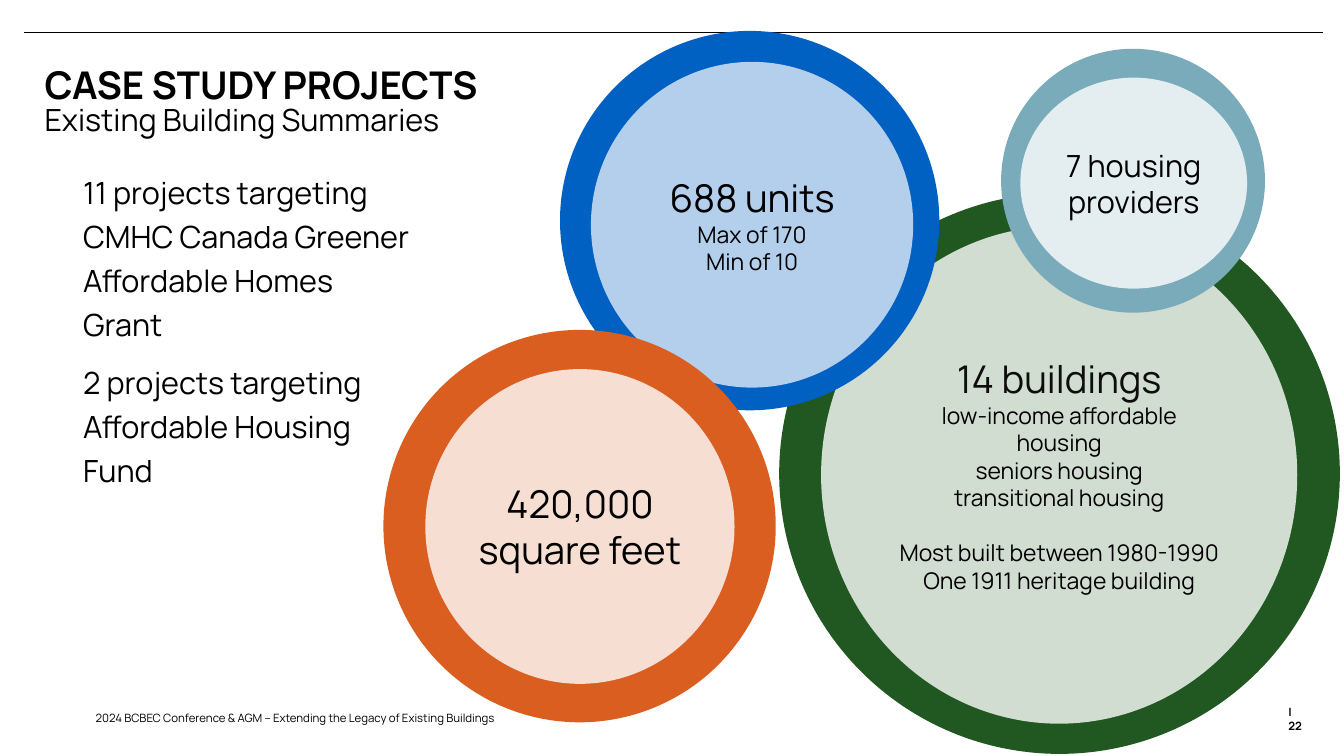
from dataclasses import dataclass

from lxml.etree import SubElement
from pptx import Presentation
from pptx.dml.color import RGBColor
from pptx.enum.shapes import MSO_CONNECTOR, MSO_SHAPE
from pptx.enum.text import MSO_ANCHOR, MSO_AUTO_SIZE, PP_ALIGN
from pptx.oxml.ns import qn
from pptx.util import Inches, Pt


@dataclass(frozen=True)
class Theme:
    font: str = "Manrope"
    ink: str = "000000"
    soft_ink: str = "0D0D0D"
    white: str = "FFFFFF"
    green: str = "215721"
    teal: str = "7AABBA"
    blue: str = "0061C2"
    orange: str = "DB5E21"
    headline: int = 40
    body: int = 32
    detail: int = 24
    footer: int = 12


THEME = Theme()


def place(shape, left, top, width, height):
    shape.left, shape.top = Inches(left), Inches(top)
    shape.width, shape.height = Inches(width), Inches(height)


def set_up_frame(shape, anchor=MSO_ANCHOR.TOP, inset=0.1):
    frame = shape.text_frame
    frame.word_wrap = True
    frame.auto_size = MSO_AUTO_SIZE.NONE
    frame.vertical_anchor = anchor
    frame.margin_left = frame.margin_right = Inches(inset)
    frame.margin_top = frame.margin_bottom = Inches(inset / 2)
    return frame


def write(frame, text, size=THEME.body, color=THEME.ink, bold=False,
          align=PP_ALIGN.LEFT, spacing=1.0, before=0, tab=None):
    paragraph = frame.paragraphs[0]
    if paragraph.runs:
        paragraph = frame.add_paragraph()
    paragraph.alignment = align
    paragraph.line_spacing = spacing
    paragraph.space_before = Pt(before)
    properties = paragraph._p.get_or_add_pPr()
    properties.set("marL", "0")
    properties.set("indent", "0")
    SubElement(properties, qn("a:buNone"))
    if tab:
        tabs = SubElement(properties, qn("a:tabLst"))
        SubElement(tabs, qn("a:tab"), pos=str(Inches(tab)), algn="l")
    run = paragraph.add_run()
    run.text = text
    run.font.name = THEME.font
    run.font.size = Pt(size)
    run.font.bold = bold
    run.font.color.rgb = RGBColor.from_string(color)


def add_label(slide, box, text, inset=0.1, **style):
    shape = slide.shapes.add_textbox(*map(Inches, box))
    write(set_up_frame(shape, MSO_ANCHOR.MIDDLE, inset), text, **style)


def add_ellipse(slide, box, color, opacity=100):
    shape = slide.shapes.add_shape(MSO_SHAPE.OVAL, *map(Inches, box))
    shape.shadow.inherit = False
    shape.line.fill.background()
    shape.fill.solid()
    shape.fill.fore_color.rgb = RGBColor.from_string(color)
    if opacity < 100:
        fill_color = shape.fill._xPr.find(qn("a:solidFill"))[0]
        SubElement(fill_color, qn("a:alpha"), val=str(opacity * 1000))
    return shape


def add_bubble(slide, left, top, diameter, color, disc, opacity, lines):
    add_ellipse(slide, (left, top, diameter, diameter), color)
    inner = add_ellipse(slide, disc, THEME.white, opacity)
    frame = set_up_frame(inner, MSO_ANCHOR.MIDDLE)
    for text, style in lines:
        write(frame, text, align=PP_ALIGN.CENTER, **style)


def add_top_rule(slide):
    rule = slide.shapes.add_connector(
        MSO_CONNECTOR.STRAIGHT, Inches(0.35), Inches(0.47), Inches(19.25), Inches(0.47))
    rule.line.color.rgb = RGBColor.from_string(THEME.ink)
    rule.line.width = Pt(1)
    SubElement(rule._element.spPr, qn("a:effectLst"))


def add_headings(slide):
    title = slide.shapes.title
    place(title, 0.55, 0.84, 7.12, 0.47)
    write(set_up_frame(title), "CASE STUDY PROJECTS", size=THEME.headline, bold=True)
    add_label(slide, (0.55, 1.53, 7.12, 0.47), "Existing Building Summaries", spacing=0.9)


def add_body(slide):
    body = slide.placeholders[1]
    place(body, 1.11, 2.37, 5.02, 6.97)
    frame = set_up_frame(body)
    write(frame, "11 projects targeting CMHC Canada Greener Affordable Homes Grant", spacing=1.2)
    write(frame, "2 projects targeting Affordable Housing Fund", spacing=1.2, before=14.7)


def add_bubbles(slide):
    headline = {"size": THEME.headline}
    detail = {"size": THEME.detail}
    add_bubble(slide, 11.34, 2.81, 8.16, THEME.green, (11.95, 3.29, 6.93, 7.24), 80, [
        ("14 buildings", {**headline, "color": THEME.soft_ink}),
        ("low-income affordable housing", detail),
        ("seniors housing", detail),
        ("transitional housing", detail),
        ("Most built between 1980-1990", {**detail, "before": 28.8}),
        ("One 1911 heritage building", detail),
    ])
    add_bubble(slide, 14.57, 0.71, 3.84, THEME.teal, (14.85, 1.13, 3.3, 3.07), 80, [
        ("7 housing providers", {}),
    ])
    add_bubble(slide, 8.15, 0.45, 5.52, THEME.blue, (8.6, 0.9, 4.69, 4.74), 70, [
        ("688 units", headline),
        ("Max of 170", detail),
        ("Min of 10", detail),
    ])
    add_bubble(slide, 5.58, 4.8, 5.71, THEME.orange, (6.19, 5.37, 4.5, 4.58), 80, [
        ("420,000 square feet", headline),
    ])


def add_footer(slide):
    add_label(slide, (1.27, 10.15, 11.35, 0.59),
              "2024 BCBEC Conference & AGM – Extending the Legacy of Existing Buildings",
              inset=0.12, size=THEME.footer)
    add_label(slide, (18.63, 10.17, 0.7, 0.59), "|\t22",
              inset=0.12, size=THEME.footer, bold=True, tab=0.19)


def main():
    presentation = Presentation()
    presentation.slide_width = Inches(19.56)
    presentation.slide_height = Inches(11)
    slide = presentation.slides.add_slide(presentation.slide_layouts[1])
    add_footer(slide)
    add_top_rule(slide)
    add_headings(slide)
    add_body(slide)
    add_bubbles(slide)
    presentation.save("out.pptx")


if __name__ == "__main__":
    main()
